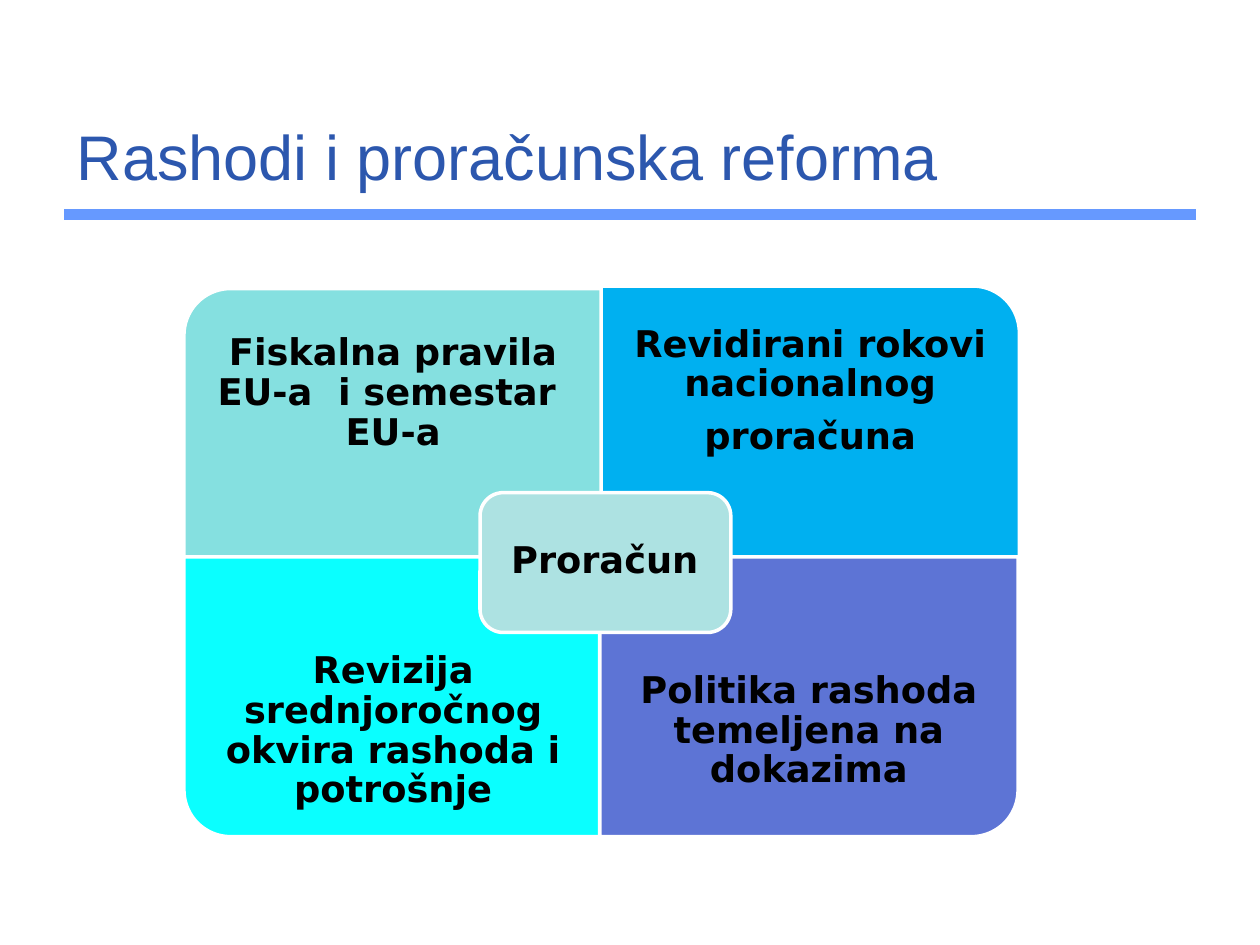
from pptx import Presentation
from pptx.dml.color import RGBColor
from pptx.enum.shapes import MSO_CONNECTOR as LINK, MSO_SHAPE as SHAPE
from pptx.enum.text import MSO_ANCHOR as ANCHOR, PP_ALIGN as ALIGN
from pptx.oxml.ns import qn
from pptx.util import Inches, Pt
from lxml import etree

HEX = {
    "title": "2C57AE", "rule": "6699FF", "text": "000000", "edge": "FFFFFF",
    "rules": "85E0E0", "dates": "00B0F0", "review": "0AFFFF",
    "policy": "5D74D5", "core": "ADE2E2",
}
WIDE, HIGH = 3.32, 2.22  # one tile as seen
TEXT_H = 1.67            # text area of a tile

# left, top, turn in degrees, colour, paragraphs
TILES = [
    (1.46, 2.29, 270, "rules", ["Fiskalna pravila EU-a  i semestar  EU-a"]),
    (4.77, 2.27, 0, "dates", ["Revidirani rokovi nacionalnog", "proračuna"]),
    (1.46, 4.42, 180, "review",
     ["Revizija srednjoročnog okvira rashoda i potrošnje"]),
    (4.76, 4.42, 90, "policy", ["Politika rashoda temeljena na dokazima"]),
]


def color(name):
    return RGBColor.from_string(HEX[name])


def add_text(slide, box, lines, size=21, font="DejaVu Sans", hue="text",
             bold=True, align=ALIGN.CENTER, anchor=ANCHOR.MIDDLE,
             pad=(0.16, 0.16), lead=0.9, after=7.35):
    frame = slide.shapes.add_textbox(*map(Inches, box)).text_frame
    frame.word_wrap = True
    frame.vertical_anchor = anchor
    frame.margin_left = frame.margin_right = Inches(pad[0])
    frame.margin_top = frame.margin_bottom = Inches(pad[1])
    for i, line in enumerate(lines):
        para = frame.add_paragraph() if i else frame.paragraphs[0]
        para.alignment = align
        para.line_spacing = lead
        para.space_after = Pt(after)
        run = para.add_run()
        run.text = line
        run.font.size = Pt(size)
        run.font.name = font
        run.font.bold = bold
        run.font.color.rgb = color(hue)


def add_block(slide, kind, box, hue, turn=0):
    """Place a filled shape so that its turned outline covers the box."""
    left, top, wide, high = box
    if turn % 180:
        shift = (wide - high) / 2
        left, top, wide, high = left + shift, top - shift, high, wide
    shape = slide.shapes.add_shape(
        kind, *map(Inches, (left, top, wide, high)))
    shape.rotation = turn
    shape.shadow.inherit = False
    shape.fill.solid()
    shape.fill.fore_color.rgb = color(hue)
    shape.line.color.rgb = color("edge")
    shape.line.width = Pt(2)


def add_rule(slide, left, right, y):
    line = slide.shapes.add_connector(
        LINK.STRAIGHT, *map(Inches, (left, y, right, y)))
    line.line.color.rgb = color("rule")
    line.line.width = Pt(6.25)
    etree.SubElement(line._element.spPr, qn("a:effectLst"))


def add_tile(slide, left, top, turn, hue, lines):
    add_block(slide, SHAPE.ROUND_1_RECTANGLE, (left, top, WIDE, HIGH),
              hue, turn)
    # Lower tiles keep their text clear of the centre
    drop = HIGH - TEXT_H if turn in (90, 180) else 0
    add_text(slide, (left, top + drop, WIDE, TEXT_H), lines)


def main():
    deck = Presentation()
    deck.slide_width, deck.slide_height = Inches(10), Inches(7.5)
    slide = deck.slides.add_slide(deck.slide_layouts[6])

    # Heading
    add_rule(slide, 0.51, 9.49, 1.7)
    add_text(slide, (0.51, 0.33, 8.98, 1.25), ["Rashodi i proračunska reforma"],
             size=36, font="Arial", hue="title", bold=False, align=ALIGN.LEFT,
             anchor=ANCHOR.BOTTOM, pad=(0.1, 0.05), lead=1.0, after=0)

    # Four tiles
    for tile in TILES:
        add_tile(slide, *tile)

    # Centre
    add_block(slide, SHAPE.ROUNDED_RECTANGLE, (3.81, 3.91, 1.99, 1.11), "core")
    add_text(slide, (3.86, 3.96, 1.88, 1), ["Proračun"], pad=(0.09, 0.09))

    deck.save("out.pptx")


if __name__ == "__main__":
    main()
